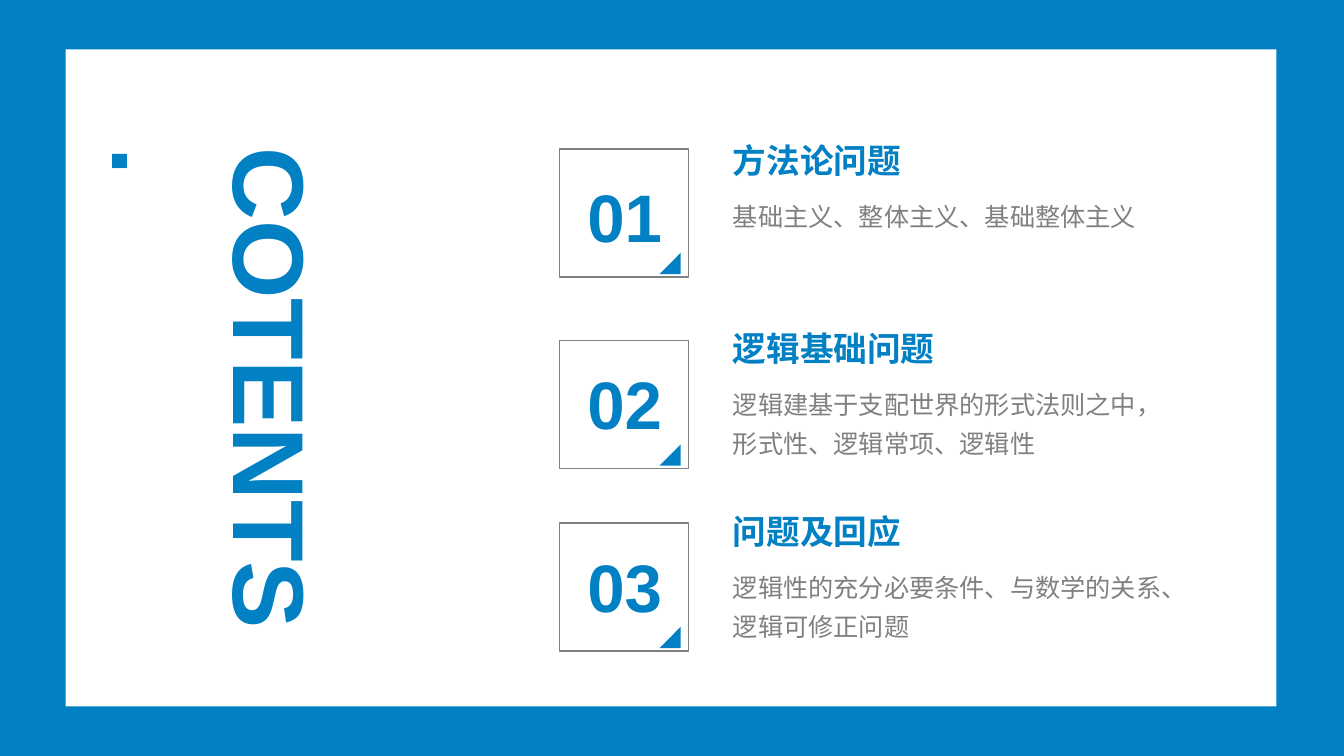
import pptx
import pptx.util
import pptx.dml.color
import pptx.enum.shapes
import pptx.enum.text

SHAPE = pptx.enum.shapes.MSO_SHAPE
ANCHOR = pptx.enum.text.MSO_ANCHOR
ALIGN = pptx.enum.text.PP_ALIGN
WIDTH = pptx.util.Inches(13.33)
HEIGHT = pptx.util.Inches(7.5)
COL = WIDTH / 100
ROW = HEIGHT / 100
BLUE = "0180C3"
GRAY = "808080"
WHITE = "FFFFFF"

ITEMS = [
    (17.87, 19.73, "方法论问题", ["基础主义、整体主义、基础整体主义"]),
    (42.67, 45.07, "逻辑基础问题",
     ["逻辑建基于支配世界的形式法则之中，", "形式性、逻辑常项、逻辑性"]),
    (66.93, 69.2, "问题及回应",
     ["逻辑性的充分必要条件、与数学的关系、", "逻辑可修正问题"]),
]


def color(code):
    return pptx.dml.color.RGBColor.from_string(code)


def place(left, top, width, height):
    return [round(n) for n in (left * COL, top * ROW, width * COL, height * ROW)]


def add_form(slide, kind, area, fill=None, line=None, turn=0):
    form = slide.shapes.add_shape(kind, *place(*area))
    form.shadow.inherit = False
    form.rotation = turn
    if fill:
        form.fill.solid()
        form.fill.fore_color.rgb = color(fill)
    else:
        form.fill.background()
    if line:
        form.line.color.rgb = color(line)
        form.line.width = pptx.util.Pt(1)
    else:
        form.line.fill.background()


def add_text(slide, area, lines, size, tint=BLUE, bold=True, anchor=ANCHOR.TOP,
             align=ALIGN.LEFT, space=1.0, turn=0):
    box = slide.shapes.add_textbox(*place(*area))
    box.rotation = turn
    frame = box.text_frame
    frame.word_wrap = True
    frame.vertical_anchor = anchor
    frame.text = "\n".join(lines)
    for para in frame.paragraphs:
        para.alignment = align
        para.line_spacing = space
        para.font.name = "Arial"
        para.font.size = pptx.util.Pt(size)
        para.font.bold = bold
        para.font.color.rgb = color(tint)


def add_item(slide, label, top, edge, title, lines):
    add_form(slide, SHAPE.FLOWCHART_PROCESS, (41.64, edge, 9.6, 16.93), line=GRAY)
    add_form(slide, SHAPE.RIGHT_TRIANGLE, (49.06, edge + 13.73, 1.58, 2.8),
             fill=BLUE, turn=270)
    add_text(slide, (41.79, top + 4.53, 9.38, 12.13), [label], 48,
             anchor=ANCHOR.MIDDLE, align=ALIGN.CENTER)
    add_text(slide, (53.79, top, 35.33, 6.67), [title], 24, anchor=ANCHOR.BOTTOM)
    add_text(slide, (53.79, top + 6.93, 35.33, 11.87), lines, 18,
             tint=GRAY, bold=False, space=1.3)


def main():
    deck = pptx.Presentation()
    deck.slide_width = WIDTH
    deck.slide_height = HEIGHT
    slide = deck.slides.add_slide(deck.slide_layouts[6])
    slide.background.fill.solid()
    slide.background.fill.fore_color.rgb = color(BLUE)
    add_form(slide, SHAPE.RECTANGLE, (4.88, 6.53, 90.1, 86.93), fill=WHITE)
    add_text(slide, (1.2, 43.47, 38.26, 17.47), ["COTENTS."], 72, turn=90)
    for count, item in enumerate(ITEMS, 1):
        add_item(slide, f"{count:02}", *item)
    deck.save("out.pptx")


if __name__ == "__main__":
    main()
